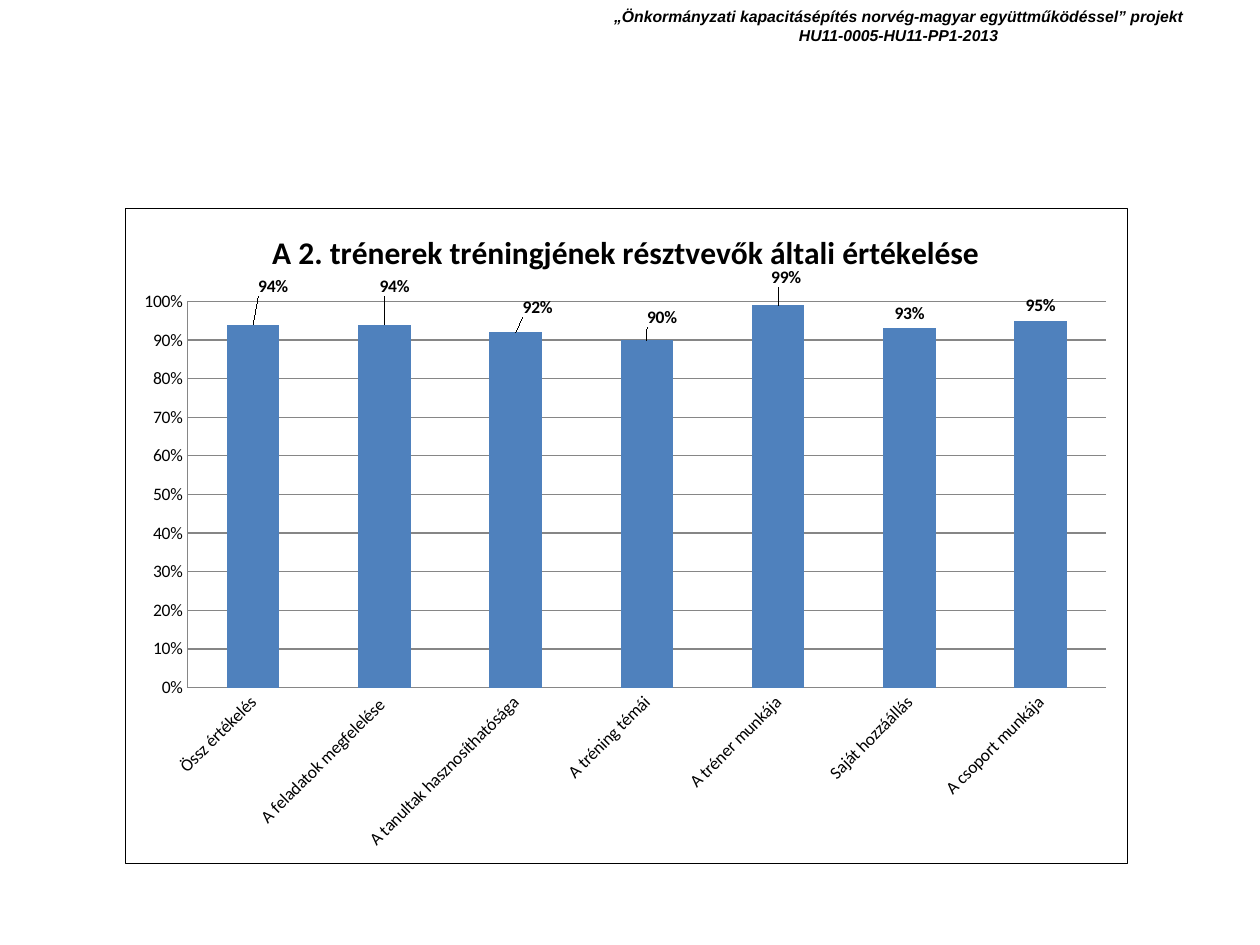
"""Build a slide with a column chart of how participants rated the training."""
from typing import NamedTuple

from lxml.etree import Element, SubElement
from pptx import Presentation
from pptx.chart.data import CategoryChartData
from pptx.dml.color import RGBColor
from pptx.enum.chart import XL_CHART_TYPE as ChartType, XL_LABEL_POSITION as LabelPos
from pptx.enum.chart import XL_TICK_MARK as TickMark
from pptx.enum.text import MSO_ANCHOR, MSO_AUTO_SIZE, PP_ALIGN
from pptx.oxml import parse_xml
from pptx.oxml.ns import nsdecls, qn
from pptx.util import Pt

EMU_PER_PX = 914400 / 126
BLACK = RGBColor(0x00, 0x00, 0x00)
BLUE = RGBColor(0x4F, 0x81, 0xBD)
GREY = RGBColor(0x86, 0x86, 0x86)
PERCENT = "0%"
SLANT = "-2700000"


class Box(NamedTuple):
    left: int
    top: int
    width: int
    height: int


class Rating(NamedTuple):
    topic: str
    share: float
    label_shift: tuple[int, int] | None = None


SLIDE = Box(0, 0, 1260, 945)
HEADER = Box(537, 0, 723, 55)
CHART = Box(125, 208, 1003, 656)
PLOT = Box(187, 301, 920, 387)
CHART_TITLE = (266, 224)

PROJECT_LINES = (
    "„Önkormányzati kapacitásépítés norvég‐magyar együttműködéssel” projekt",
    "HU11-0005-HU11-PP1-2013",
)
RATINGS = (
    Rating("Össz értékelés", 0.94, (20, -23)),
    Rating("A feladatok megfelelése ", 0.94, (10, -23)),
    Rating("A tanultak hasznosíthatósága", 0.92, (22, -10)),
    Rating("A tréning témái", 0.9, (15, -8)),
    Rating("A tréner munkája", 0.99, (8, -13)),
    Rating("Saját hozzáállás", 0.93),
    Rating("A csoport munkája", 0.95),
)


def px(length: int) -> int:
    """Turn pixels into EMU."""
    return round(length * EMU_PER_PX)


def across(length: int) -> float:
    """Turn pixels into a share of the chart width."""
    return round(length / CHART.width, 4)


def down(length: int) -> float:
    """Turn pixels into a share of the chart height."""
    return round(length / CHART.height, 4)


def style_font(font, size: int, name: str, bold: bool = False) -> None:
    """Set a black font."""
    font.size, font.name, font.bold = Pt(size), name, bold
    font.color.rgb = BLACK


def set_layout(parent, index: int, **settings) -> None:
    """Give a chart part a manual layout."""
    for old in parent.findall(qn("c:layout")):
        parent.remove(old)
    layout = Element(qn("c:layout"))
    manual = SubElement(layout, qn("c:manualLayout"))
    for tag, value in settings.items():
        SubElement(manual, qn(f"c:{tag}")).set("val", str(value))
    parent.insert(index, layout)


def add_header(slide) -> None:
    """Fill the title placeholder with the project name and number."""
    title = slide.shapes.title
    title.left, title.top, title.width, title.height = map(px, HEADER)
    frame = title.text_frame
    frame.word_wrap = True
    frame.auto_size = MSO_AUTO_SIZE.NONE
    frame.vertical_anchor = MSO_ANCHOR.MIDDLE
    frame.margin_bottom = px(10)
    paragraph = frame.paragraphs[0]
    paragraph.alignment = PP_ALIGN.CENTER
    for number, line in enumerate(PROJECT_LINES):
        if number:
            paragraph.add_line_break()
        run = paragraph.add_run()
        run.text = line
        style_font(run.font, 9, "Arial", bold=True)
        run.font.italic = True


def style_axes(chart) -> None:
    """Set the percent scale, gridlines and slanted topics."""
    values, topics = chart.value_axis, chart.category_axis
    values.minimum_scale, values.maximum_scale, values.major_unit = 0, 1, 0.1
    values.tick_labels.number_format = PERCENT
    values.tick_labels.number_format_is_linked = False
    values.has_major_gridlines = True
    for line in (values.major_gridlines.format.line, values.format.line, topics.format.line):
        line.color.rgb, line.width = GREY, Pt(0.75)
    for axis in (values, topics):
        axis.major_tick_mark = axis.minor_tick_mark = TickMark.NONE
        style_font(axis.tick_labels.font, 10, "Calibri")
    slanted = f".//{qn('c:catAx')}/{qn('c:txPr')}/{qn('a:bodyPr')}"
    chart.element.find(slanted).set("rot", SLANT)


def hide_leader_lines(chart) -> None:
    """Keep shifted labels free of lines to their columns."""
    for labels in chart.element.iter(qn("c:dLbls")):
        for lines in labels.findall(qn("c:showLeaderLines")):
            labels.remove(lines)
        labels.append(parse_xml(
            f'<c:extLst {nsdecls("c")}><c:ext uri="{{CE6537A1-D6FC-4f65-9D91-7224C49458BB}}" '
            'xmlns:c15="http://schemas.microsoft.com/office/drawing/2012/chart">'
            '<c15:showLeaderLines val="0"/></c:ext></c:extLst>'))


def style_labels(chart, series) -> None:
    """Show bold percentages, some of them shifted from the column top."""
    labels = series.data_labels
    labels.show_value = True
    labels.number_format, labels.number_format_is_linked = PERCENT, False
    labels.position = LabelPos.OUTSIDE_END
    style_font(labels.font, 10, "Calibri", bold=True)
    shifted = [(i, r.label_shift) for i, r in enumerate(RATINGS) if r.label_shift]
    for index, _ in shifted:
        label = series.points[index].data_label
        style_font(label.font, 10, "Calibri", bold=True)
        label.position = LabelPos.OUTSIDE_END
    for element, (_, (dx, dy)) in zip(chart.element.iter(qn("c:dLbl")), shifted):
        set_layout(element, 1, x=across(dx), y=down(dy))
        element.insert(2, Element(qn("c:numFmt"), formatCode=PERCENT, sourceLinked="0"))
    hide_leader_lines(chart)


def place_parts(chart) -> None:
    """Place the chart title and the plot, and frame the chart."""
    root = chart.element
    title_left, title_top = CHART_TITLE
    set_layout(next(root.iter(qn("c:title"))), 1, xMode="edge", yMode="edge",
               x=across(title_left - CHART.left), y=down(title_top - CHART.top))
    set_layout(next(root.iter(qn("c:plotArea"))), 0, layoutTarget="inner",
               xMode="edge", yMode="edge",
               x=across(PLOT.left - CHART.left), y=down(PLOT.top - CHART.top),
               w=across(PLOT.width), h=down(PLOT.height))
    root.find(qn("c:txPr")).addprevious(parse_xml(
        f'<c:spPr {nsdecls("c", "a")}><a:noFill/><a:ln w="{Pt(0.75)}"><a:solidFill>'
        f'<a:srgbClr val="{BLACK}"/></a:solidFill></a:ln></c:spPr>'))


def add_rating_chart(slide) -> None:
    """Draw the framed column chart of ratings."""
    data = CategoryChartData(number_format=PERCENT)
    data.categories = [rating.topic for rating in RATINGS]
    data.add_series("Series 1", [rating.share for rating in RATINGS])
    chart = slide.shapes.add_chart(ChartType.COLUMN_CLUSTERED, *map(px, CHART), data).chart
    style_font(chart.font, 10, "Calibri")
    chart.has_legend = False
    chart.has_title = True
    run = chart.chart_title.text_frame.paragraphs[0].add_run()
    run.text = "A 2. trénerek tréningjének résztvevők általi értékelése"
    style_font(run.font, 18, "Calibri", bold=True)
    plot = chart.plots[0]
    plot.gap_width, plot.vary_by_categories = 150, False
    ratings = plot.series[0]
    ratings.format.fill.solid()
    ratings.format.fill.fore_color.rgb = BLUE
    style_axes(chart)
    style_labels(chart, ratings)
    place_parts(chart)


def main() -> None:
    """Build and save the slide."""
    deck = Presentation()
    deck.slide_width, deck.slide_height = px(SLIDE.width), px(SLIDE.height)
    slide = deck.slides.add_slide(deck.slide_layouts[5])
    add_header(slide)
    add_rating_chart(slide)
    deck.save("out.pptx")


if __name__ == "__main__":
    main()
